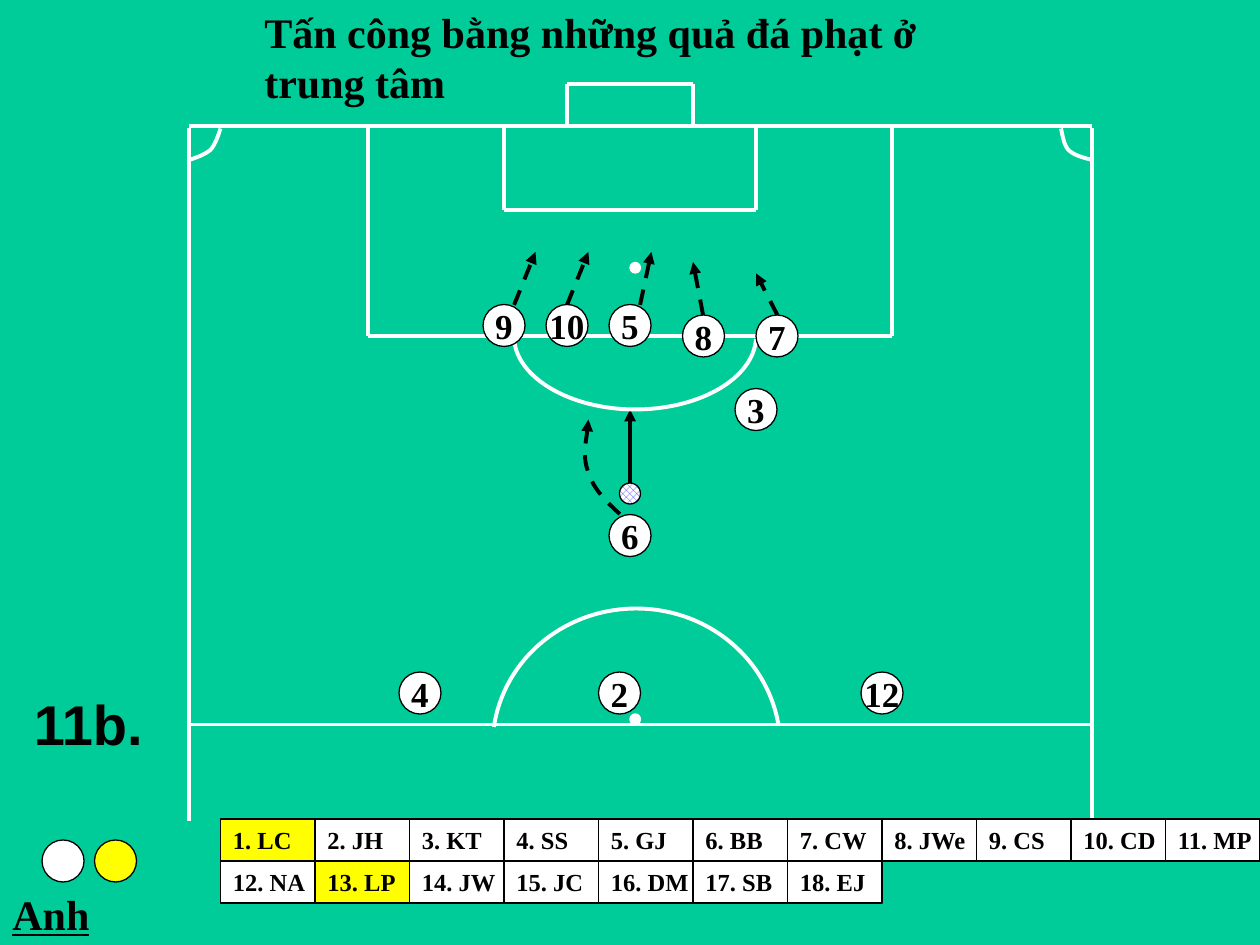
from lxml.etree import SubElement
from pptx import Presentation
from pptx.dml.color import RGBColor
from pptx.enum.dml import MSO_LINE as Dash, MSO_PATTERN as Pat
from pptx.enum.shapes import MSO_CONNECTOR as Link, MSO_SHAPE as Kind
from pptx.enum.text import MSO_ANCHOR as Anchor, PP_ALIGN as Align
from pptx.oxml.ns import qn
from pptx.util import Inches, Pt

HUES = {"grass": "00CC99", "white": "FFFFFF", "black": "000000",
        "yellow": "FFFF00", "blue": "3333FF"}
rgb = {name: RGBColor.from_string(code) for name, code in HUES.items()}


def style(shape, fill=None, line="black", width=0.75, dash=False, arrow=False):
    """Set fill and outline, add an arrowhead if asked, and drop the shadow."""
    if fill:
        shape.fill.solid()
        shape.fill.fore_color.rgb = rgb[fill]
    shape.line.color.rgb = rgb[line]
    shape.line.width = Pt(width)
    if dash:
        shape.line.dash_style = Dash.DASH
    props = shape._element.spPr
    if arrow:
        SubElement(props.find(qn("a:ln")), qn("a:tailEnd"), type="triangle")
    SubElement(props, qn("a:effectLst"))


def write(shape, text, size, font="Times New Roman", align=Align.LEFT,
          anchor=Anchor.MIDDLE, wrap=False, under=None):
    frame = shape.text_frame
    frame.word_wrap = wrap
    frame.vertical_anchor = anchor
    para = frame.paragraphs[0]
    para.alignment = align
    run = para.add_run()
    run.text = text
    run.font.name, run.font.size = font, Pt(size)
    run.font.bold, run.font.underline = True, under
    run.font.color.rgb = rgb["black"]


deck = Presentation()
deck.slide_width, deck.slide_height = Inches(10), Inches(7.5)
slide = deck.slides.add_slide(deck.slide_layouts[6])
slide.background.fill.solid()
slide.background.fill.fore_color.rgb = rgb["grass"]
shapes = slide.shapes
unit = Inches(1) / 12  # discs and cells sit on a grid of twelfths of an inch

# Pitch lines, then the paths of the players and the ball
pitch = [
    (1.5, 1, 8.67, 1), (1.5, 5.75, 8.67, 5.75),
    (1.5, 1.02, 1.5, 6.52), (8.67, 1.02, 8.67, 6.52),
]
# Goal, goal area, penalty area: left, right, end of the sides, cross line
for left, right, end in [(4.5, 5.5, 0.67), (4, 6, 1.67), (2.92, 7.08, 2.67)]:
    pitch += [(left, 1, left, end), (right, 1, right, end), (left, end, right, end)]
runs = [
    (4.08, 2.42, 4.25, 2), (4.5, 2.42, 4.67, 2), (5.08, 2.42, 5.17, 2),
    (5.58, 2.5, 5.5, 2.08), (6.17, 2.5, 6, 2.17),
]
shot = [(5, 3.83, 5, 3.25)]
white = dict(line="white", width=2.25)
move = dict(width=2.25, dash=True, arrow=True)
for group, look in [(pitch, white), (runs, move), (shot, dict(width=2.25, arrow=True))]:
    for ends in group:
        line = shapes.add_connector(Link.STRAIGHT, *[Inches(v) for v in ends])
        style(line, **look)

# Curves: chains of cubic Bezier pieces that share their end points
curves = [
    ([(6.18, 5.76), (6.09, 5.22), (5.61, 4.83), (5.05, 4.83),
      (4.48, 4.83), (4, 5.23), (3.92, 5.77)], white),
    ([(6, 2.69), (5.98, 3), (5.56, 3.25), (5.04, 3.25),
      (4.53, 3.25), (4.1, 3), (4.08, 2.69)], white),
    ([(8.67, 1.27), (8.59, 1.25), (8.52, 1.23), (8.48, 1.19),
      (8.44, 1.15), (8.43, 1.05), (8.42, 1.02)], white),
    ([(1.5, 1.27), (1.56, 1.25), (1.62, 1.23), (1.67, 1.19),
      (1.71, 1.15), (1.74, 1.05), (1.75, 1.02)], white),
    ([(4.92, 4.08), (4.81, 3.98), (4.71, 3.88), (4.67, 3.75),
      (4.62, 3.62), (4.67, 3.4), (4.67, 3.33)], move),
]
for knots, look in curves:
    start, *rest = [(Inches(x), Inches(y)) for x, y in knots]
    pen = shapes.build_freeform(*start)
    pen.add_line_segments(rest, close=False)
    curve = pen.convert_to_shape()
    # Turn every three straight segments into one cubic piece
    legs = list(curve._element.iter(qn("a:lnTo")))
    track = legs[0].getparent()
    for first in range(0, len(legs), 3):
        piece = SubElement(track, qn("a:cubicBezTo"))
        for leg in legs[first:first + 3]:
            piece.append(leg[0])
            track.remove(leg)
    curve.fill.background()
    style(curve, **look)

# Spots and team colours, in grid units
for x, y, size, fill, edge in [
    (60, 68, 1, "white", "white"), (60, 25, 1, "white", "white"),
    (4, 80, 4, "white", "black"), (9, 80, 4, "yellow", "black"),
]:
    spot = shapes.add_shape(Kind.OVAL, *[round(v * unit) for v in (x, y, size, size)])
    style(spot, fill, edge)
ball = shapes.add_shape(Kind.OVAL, *[round(v * unit) for v in (59, 46, 2, 2)])
ball.fill.patterned()
ball.fill.pattern = Pat.LARGE_CHECKER_BOARD
ball.fill.fore_color.rgb = rgb["blue"]
ball.fill.back_color.rgb = rgb["white"]
style(ball)

# Squad list, eleven to a row
squad = "LC JH KT SS GJ BB CW JWe CS CD MP NA LP JW JC DM SB EJ".split()
for i, name in enumerate(squad):
    row, col = divmod(i, 11)
    box = (21 + 9 * col, 78 + 4 * row, 9, 4)
    cell = shapes.add_shape(Kind.RECTANGLE, *[round(v * unit) for v in box])
    style(cell, "yellow" if name in ("LC", "LP") else "white")
    write(cell, f"{i + 1}. {name}", 14)

# Players on the pitch, in grid units
for number, x, y in [
    (2, 57, 64), (12, 82, 64), (6, 58, 49), (7, 72, 30), (9, 46, 29),
    (10, 52, 29), (3, 70, 37), (5, 58, 29), (8, 65, 30), (4, 38, 64),
]:
    disc = shapes.add_shape(Kind.FLOWCHART_CONNECTOR,
                            *[round(v * unit) for v in (x, y, 4, 4)])
    style(disc, "white")
    write(disc, str(number), 20, align=Align.CENTER)

# Headings
for text, box, look in [
    ("Tấn công bằng những quả đá phạt ở trung tâm", (2, 0, 6.25, 0.91), dict(size=24)),
    ("11b.", (0.17, 5.42, 1.17, 0.63), dict(size=32, font="Arial")),
    ("Anh", (0, 7, 1.42, 1.11), dict(size=24, under=True)),
]:
    label = shapes.add_textbox(*[Inches(v) for v in box])
    label.text_frame.margin_right = Inches(0.2)
    write(label, text, anchor=Anchor.TOP, wrap=True, **look)

deck.save("out.pptx")
